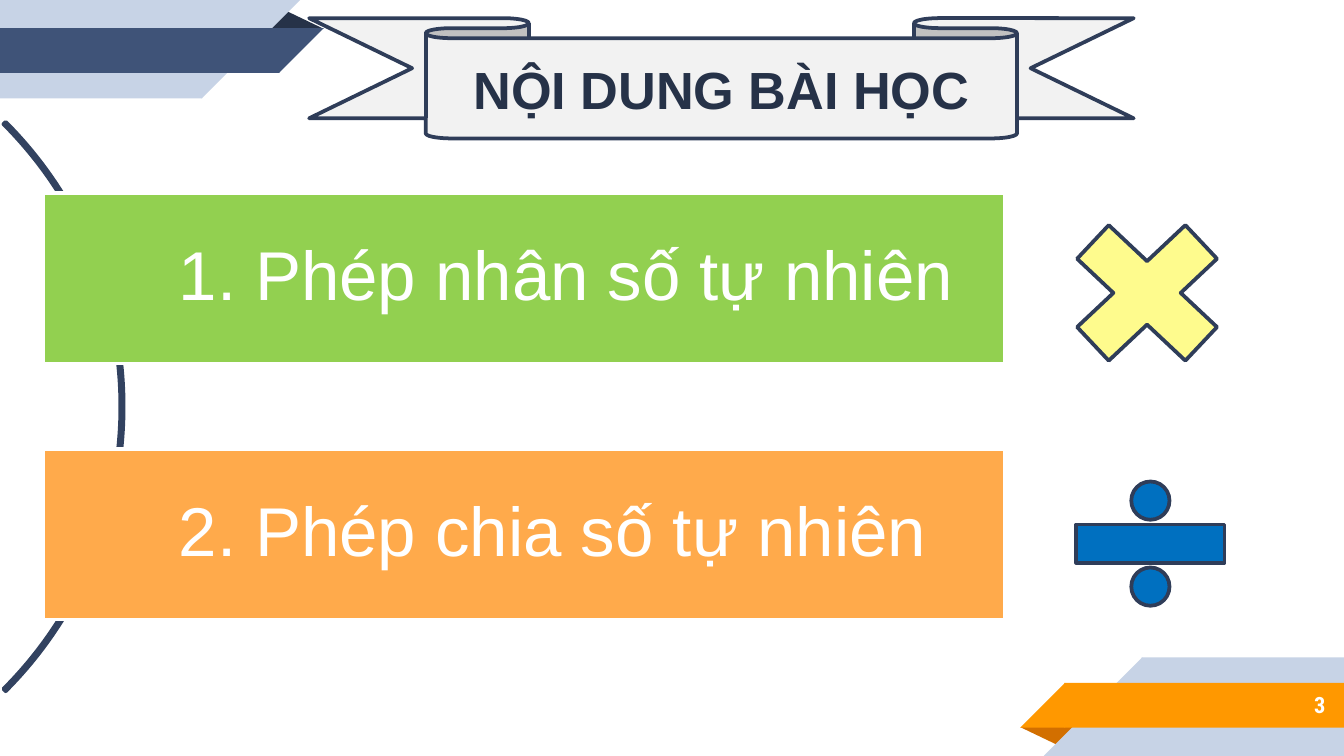
from pptx import Presentation
from pptx.dml.color import RGBColor
from pptx.enum.shapes import MSO_SHAPE
from pptx.enum.text import MSO_ANCHOR, PP_ALIGN
from pptx.util import Inches, Pt

COLUMNS, ROWS = 100, 56.25
CELL = Inches(0.1)
NAVY, OUTLINE, PALE = "263248", "2F3D59", "C7D3E6"


def cells(*counts):
    return [round(count * CELL) for count in counts]


def color(hex_string):
    return RGBColor.from_string(hex_string)


def add_figure(slide, preset, place, fill=None, line=None, adjust=()):
    """Draw a preset shape; place is left, top, width, height in grid cells."""
    figure = slide.shapes.add_shape(preset, *cells(*place))
    figure.shadow.inherit = False
    for index, value in enumerate(adjust):
        figure.adjustments[index] = value
    if fill:
        figure.fill.solid()
        figure.fill.fore_color.rgb = color(fill)
    else:
        figure.fill.background()
    if line:
        figure.line.color.rgb = color(line)
        figure.line.width = Pt(2)
    else:
        figure.line.fill.background()
    return figure


def write(holder, text, size, hex_string, font="Arial", bold=False,
          align=PP_ALIGN.LEFT, left_inset=1):
    frame = holder.text_frame
    frame.word_wrap = True
    frame.vertical_anchor = MSO_ANCHOR.MIDDLE
    frame.margin_left, frame.margin_right = cells(left_inset, 1)
    frame.text = text
    paragraph = frame.paragraphs[0]
    paragraph.alignment = align
    run_font = paragraph.runs[0].font
    run_font.name, run_font.size, run_font.bold = font, Pt(size), bold
    run_font.color.rgb = color(hex_string)
    return paragraph


def add_corner(slide, band_fill, fold_fill, bottom=False):
    """Folded stripes at top left, or turned half round at bottom right."""
    def place(left, top, width, height):
        if bottom:
            return COLUMNS - left - width, ROWS - top - height, width, height
        return left, top, width, height

    fold = add_figure(slide, MSO_SHAPE.ISOSCELES_TRIANGLE,
                      place(19.8, 0.75, 4.3, 1.4), fold_fill, adjust=[0.32])
    fold.rotation = 180 if bottom else 0
    for top, length, height, fill in ((0, 15, 7.33, PALE),
                                      (2.1, 20.75, 3.33, band_fill)):
        overlap = 0.05
        add_figure(slide, MSO_SHAPE.RECTANGLE,
                   place(0, top, length + overlap, height), fill)
        tip = add_figure(slide, MSO_SHAPE.RIGHT_TRIANGLE,
                         place(length, top, height, height), fill)
        tip.rotation = 0 if bottom else 180
        tip.element.spPr.xfrm.set("flipH", "1")


def add_topic(slide, top, text, fill):
    bar = add_figure(slide, MSO_SHAPE.RECTANGLE, (3.2, top, 71.6, 12.7),
                     fill, "FFFFFF")
    write(bar, text, 37, "FFFFFF", left_inset=10.1).line_spacing = 0.9


def main():
    deck = Presentation()
    deck.slide_width, deck.slide_height = cells(COLUMNS, ROWS)
    slide = deck.slides.add_slide(deck.slide_layouts[6])

    add_corner(slide, "3F5378", NAVY)
    add_corner(slide, "FF9800", "D26F00", bottom=True)
    page_number = slide.shapes.add_textbox(*cells(83.3, 50.7, 16.3, 3.5))
    write(page_number, "3", 12, "FFFFFF", "Roboto Condensed", True,
          PP_ALIGN.RIGHT)

    add_figure(slide, MSO_SHAPE.BLOCK_ARC, (-50.7, 0.3, 59.9, 59.9),
               line="324260", adjust=[189, 27, 0.004])
    banner = add_figure(slide, MSO_SHAPE.DOWN_RIBBON, (23, 1.35, 61.35, 8.95),
                        "F2F2F2", OUTLINE, [0.167, 0.717])
    write(banner, "NỘI DUNG BÀI HỌC", 28, NAVY, bold=True,
          align=PP_ALIGN.CENTER)

    add_topic(slide, 14.35, "1. Phép nhân số tự nhiên", "92D050")
    add_figure(slide, MSO_SHAPE.MATH_MULTIPLY, (77.6, 14.5, 15.5, 14.6),
               "FEFB8D", OUTLINE)
    add_topic(slide, 33.4, "2. Phép chia số tự nhiên", "FFAA4B")
    add_figure(slide, MSO_SHAPE.MATH_DIVIDE, (78.1, 34.4, 15, 12.1),
               "0070C0", OUTLINE)

    deck.save("out.pptx")


if __name__ == "__main__":
    main()
